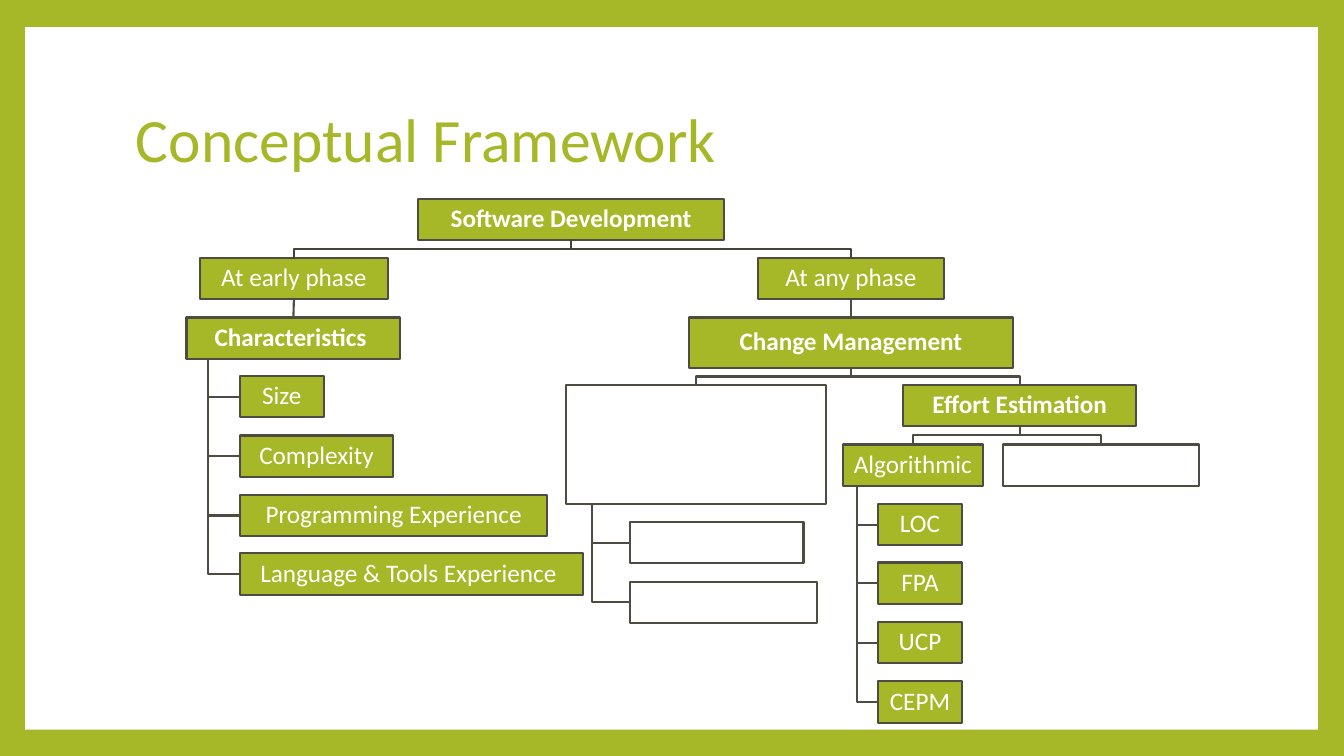
from lxml.etree import SubElement as Sub
from pptx import Presentation
from pptx.dml.color import RGBColor as Rgb
from pptx.enum.shapes import MSO_CONNECTOR as Conn, MSO_SHAPE as Form
from pptx.enum.text import MSO_ANCHOR as Anchor, PP_ALIGN as Align
from pptx.oxml.ns import qn
from pptx.util import Pt

PX = 9144
TALL = 41
HEX = {"green": "A6B727", "white": "FFFFFF", "edge": "4E4B42", "root": "45423A"}


def px(*sizes):
    return [round(size) * PX for size in sizes]


def tint(name):
    return Rgb.from_string(HEX[name])


def row(count, drop=0):
    return round(197.4 + 58.65 * count) + drop


def paint(fill, name):
    fill.solid()
    fill.fore_color.rgb = tint(name)


def stroke(line, name="edge"):
    line.color.rgb = tint(name)
    line.width = Pt(1.5)


def write(frame, text, size, color, bold=False):
    frame.word_wrap = True
    frame.vertical_anchor = Anchor.MIDDLE
    para = frame.paragraphs[0]
    para.line_spacing = 0.9
    run = para.add_run()
    run.text = text
    run.font.name = "Calibri"
    run.font.size = Pt(size)
    run.font.bold = bold
    run.font.color.rgb = tint(color)
    return para


def add_page(slide):
    paint(slide.background.fill, "green")
    page = slide.shapes.add_shape(Form.RECTANGLE, *px(25, 27, 1282, 697))
    page.shadow.inherit = False
    paint(page.fill, "white")
    page.line.fill.background()


def add_title(slide, text):
    title = slide.shapes.add_textbox(*px(125, 67, 1080, 148))
    write(title.text_frame, text, 44, "green")


def add_box(slide, text, left, top, wide, tall=TALL, bold=False):
    box = slide.shapes.add_shape(Form.RECTANGLE, *px(left, top, wide, tall))
    box.shadow.inherit = False
    paint(box.fill, "green" if text else "white")
    stroke(box.line)
    if text:
        frame = box.text_frame
        frame.margin_left = frame.margin_right = PX
        frame.margin_top = frame.margin_bottom = PX
        write(frame, text, 18, "white", bold).alignment = Align.CENTER
    return box


def add_path(slide, points, color="edge"):
    pen = slide.shapes.build_freeform(*points[0], scale=1.0)
    pen.add_line_segments(points[1:], close=False)
    path = pen.convert_to_shape()
    path.shadow.inherit = False
    path.fill.background()
    stroke(path.line, color)


def center(box):
    return box.left + box.width // 2


def add_fork(slide, head, kids, color="edge"):
    start, base = center(head), head.top + head.height
    for kid in kids:
        mid = (base + kid.top) // 2
        end = center(kid)
        add_path(slide, [(start, base), (start, mid), (end, mid), (end, kid.top)], color)


def add_list(slide, head, items, left, first, drop=0):
    stem, base = head.left + head.width // 10, head.top + head.height
    for step, (text, wide) in enumerate(items):
        box = add_box(slide, text, left, row(first + step, drop), wide)
        mid = box.top + box.height // 2
        add_path(slide, [(stem, base), (stem, mid), (box.left, mid)])


def add_link(slide, head, kid):
    link = slide.shapes.add_connector(Conn.STRAIGHT, 0, 0, 0, 0)
    link.begin_connect(head, 2)
    link.end_connect(kid, 0)
    stroke(link.line)
    Sub(link._element.spPr, qn("a:effectLst"))


def add_early(slide):
    early = add_box(slide, "At early phase", 198, row(1), 187)
    traits = add_box(slide, "Characteristics ", 185, row(2), 212, bold=True)
    add_link(slide, early, traits)
    items = [("Size", 83), ("Complexity", 152), ("Programming Experience", 305),
             ("Language & Tools Experience ", 340)]
    add_list(slide, traits, items, 238, 3)
    return early


def add_any(slide):
    phase = add_box(slide, "At any phase", 752, row(1), 184)
    change = add_box(slide, "Change Management", 683, row(2), 322, 50, True)
    add_link(slide, phase, change)
    drop = 50 - TALL
    blank = add_box(slide, "", 561, row(3, drop), 258, 118)
    effort = add_box(slide, "Effort Estimation", 896, row(3, drop), 231, bold=True)
    add_fork(slide, change, [blank, effort])
    add_list(slide, blank, [("", 172), ("", 185)], 625, 4, drop + 118 - TALL)
    method = add_box(slide, "Algorithmic", 836, row(4, drop), 139)
    other = add_box(slide, "", 995, row(4, drop), 194)
    add_fork(slide, effort, [method, other])
    items = [(name, 83) for name in ("LOC", "FPA", "UCP", "CEPM")]
    add_list(slide, method, items, 871, 5, drop)
    return phase


def main():
    deck = Presentation()
    deck.slide_width, deck.slide_height = px(1333, 750)
    slide = deck.slides.add_slide(deck.slide_layouts[6])
    add_page(slide)
    add_title(slide, "Conceptual Framework")
    root = add_box(slide, "Software Development", 415, row(0), 303, bold=True)
    add_fork(slide, root, [add_early(slide), add_any(slide)], "root")
    deck.save("out.pptx")


if __name__ == "__main__":
    main()
